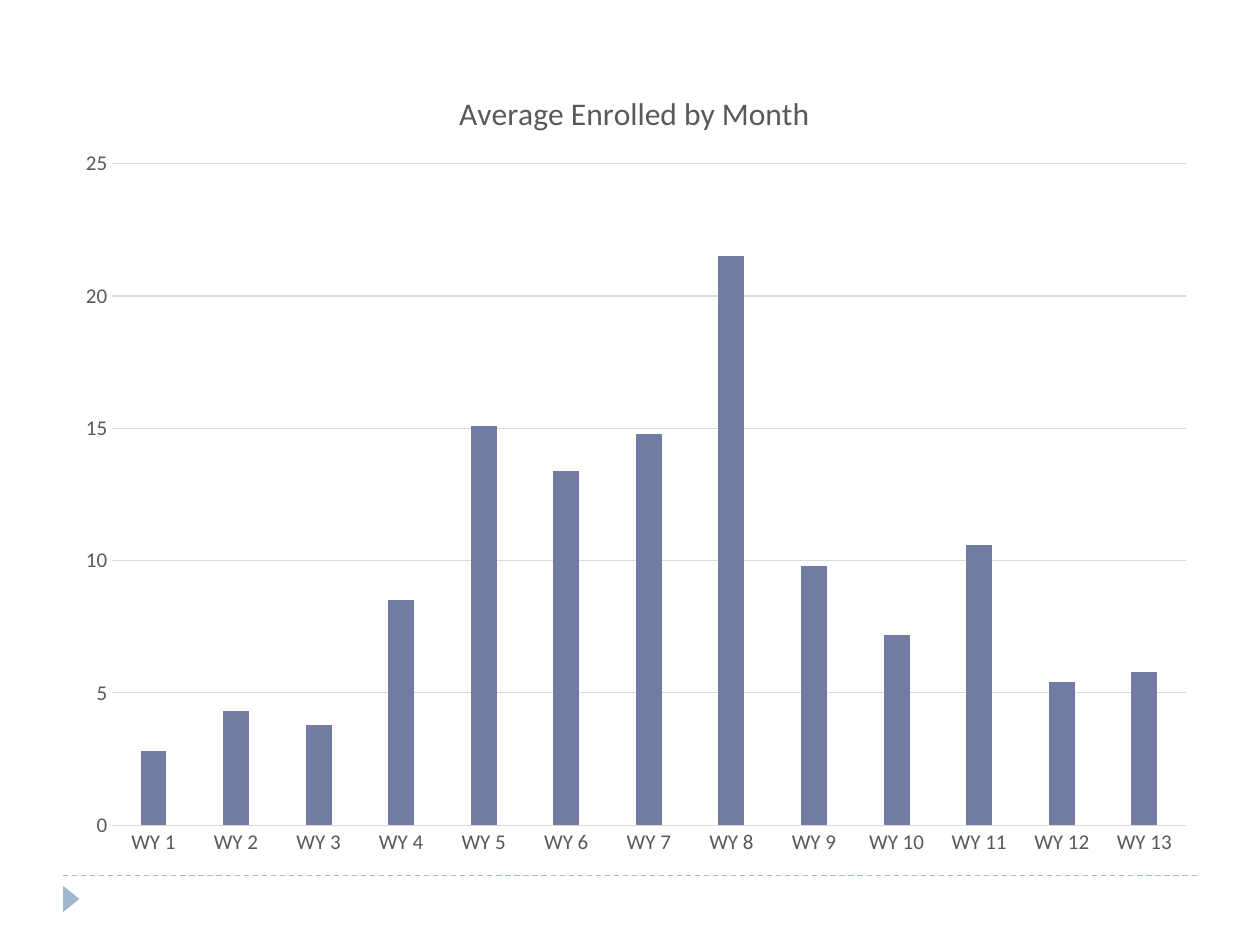
from dataclasses import dataclass

from lxml import etree
from pptx import Presentation
from pptx import util as u
from pptx.chart import data as chart_data
from pptx.dml import color
from pptx.enum import chart as charts, dml, shapes
from pptx.oxml import ns


@dataclass(frozen=True)
class Theme:
    font: str = "Calibri"
    accent: color.RGBColor = color.RGBColor.from_string("9FB8CD")
    bars: color.RGBColor = color.RGBColor.from_string("727CA3")
    label: color.RGBColor = color.RGBColor.from_string("595959")
    grid: color.RGBColor = color.RGBColor.from_string("D9D9D9")
    title_size: int = 18
    label_size: int = 12
    line_width: float = 0.75


THEME = Theme()
CHART_BOX = (0.5, 0.42, 9.08, 6.5)
PLOT_BOX = (0.89, 1.3, 8.52, 5.25)
TITLE_CORNER = (3.6, 0.68)
ENROLLED = [2.8, 4.3, 3.8, 8.5, 15.1, 13.4, 14.8, 21.5, 9.8, 7.2, 10.6, 5.4, 5.8]


def style_font(font, size):
    font.name = THEME.font
    font.size = u.Pt(size)
    font.bold = False
    font.color.rgb = THEME.label


def style_line(line, rgb):
    line.color.rgb = rgb
    line.width = u.Pt(THEME.line_width)


def add_footer_rule(page):
    rule = page.shapes.add_connector(
        shapes.MSO_CONNECTOR.STRAIGHT,
        u.Inches(0.5), u.Inches(6.95), u.Inches(9.5), u.Inches(6.95))
    style_line(rule.line, THEME.accent)
    rule.line.dash_style = dml.MSO_LINE.DASH
    etree.SubElement(rule._element.spPr, ns.qn("a:effectLst"))


def add_footer_marker(page):
    marker = page.shapes.add_shape(
        shapes.MSO_SHAPE.ISOSCELES_TRIANGLE,
        u.Inches(0.46), u.Inches(7.07), u.Inches(0.21), u.Inches(0.13))
    marker.rotation = 90
    marker.shadow.inherit = False
    marker.fill.solid()
    marker.fill.fore_color.rgb = THEME.accent
    marker.line.fill.background()


def place(parent, before, settings):
    for old in parent.findall(ns.qn("c:layout")):
        parent.remove(old)
    layout = etree.Element(ns.qn("c:layout"))
    manual = etree.SubElement(layout, ns.qn("c:manualLayout"))
    for name, value in settings.items():
        etree.SubElement(manual, ns.qn(f"c:{name}")).set("val", str(value))
    if before is None:
        parent.insert(0, layout)
    else:
        before.addnext(layout)


def corner(left, top):
    return {"xMode": "edge", "yMode": "edge",
            "x": round((left - CHART_BOX[0]) / CHART_BOX[2], 4),
            "y": round((top - CHART_BOX[1]) / CHART_BOX[3], 4)}


def set_title(chart, words):
    chart.has_title = True
    title = chart.chart_title
    title.include_in_layout = False
    title.text_frame.text = words
    style_font(title.text_frame.paragraphs[0].runs[0].font, THEME.title_size)
    element = title._element
    place(element, element.find(ns.qn("c:tx")), corner(*TITLE_CORNER))


def set_plot_area(chart):
    left, top, width, height = PLOT_BOX
    area = chart._chartSpace.chart.plotArea
    place(area, None, {
        "layoutTarget": "inner", **corner(left, top),
        "w": round(width / CHART_BOX[2], 4),
        "h": round(height / CHART_BOX[3], 4)})


def style_axes(chart):
    for axis in (chart.category_axis, chart.value_axis):
        axis.major_tick_mark = charts.XL_TICK_MARK.NONE
        axis.minor_tick_mark = charts.XL_TICK_MARK.NONE
        style_font(axis.tick_labels.font, THEME.label_size)
    style_line(chart.category_axis.format.line, THEME.grid)
    values = chart.value_axis
    values.minimum_scale, values.maximum_scale, values.major_unit = 0, 25, 5
    values.tick_labels.number_format = "General"
    values.tick_labels.number_format_is_linked = False
    values.format.line.fill.background()
    values.has_major_gridlines = True
    style_line(values.major_gridlines.format.line, THEME.grid)


def add_enrollment_chart(page):
    data = chart_data.CategoryChartData()
    data.categories = [f"WY {number}" for number in range(1, len(ENROLLED) + 1)]
    data.add_series("Series 1", ENROLLED)
    chart = page.shapes.add_chart(
        charts.XL_CHART_TYPE.COLUMN_CLUSTERED,
        *map(u.Inches, CHART_BOX), data).chart
    style_font(chart.font, THEME.label_size)
    chart.has_legend = False
    set_title(chart, "Average Enrolled by Month")
    set_plot_area(chart)
    style_axes(chart)
    plot = chart.plots[0]
    plot.vary_by_categories = False
    plot.gap_width = 219
    plot.overlap = -27
    fill = plot.series[0].format.fill
    fill.solid()
    fill.fore_color.rgb = THEME.bars


def main():
    deck = Presentation()
    deck.slide_width, deck.slide_height = u.Inches(10), u.Inches(7.5)
    page = deck.slides.add_slide(deck.slide_layouts[6])
    add_footer_rule(page)
    add_footer_marker(page)
    add_enrollment_chart(page)
    deck.save("out.pptx")


if __name__ == "__main__":
    main()
